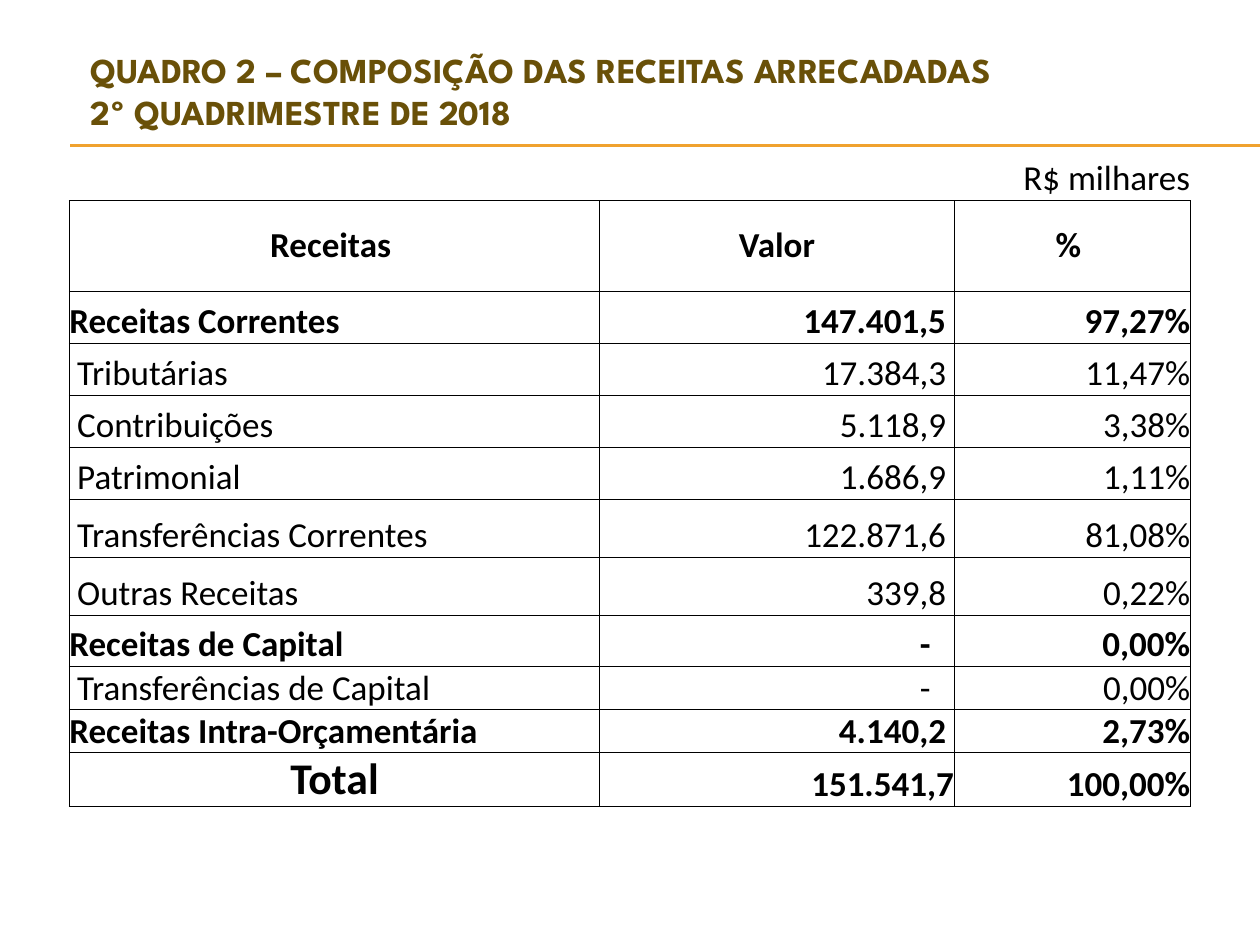
import dataclasses
import pptx
import pptx.util
import pptx.dml.color
import pptx.enum.text
import pptx.oxml
import pptx.oxml.ns
import lxml.etree

Pt = pptx.util.Pt
Align = pptx.enum.text.PP_ALIGN
Anchor = pptx.enum.text.MSO_ANCHOR


@dataclasses.dataclass(frozen=True)
class Theme:
    title: str = "695008"
    rule: str = "F0A22E"
    ink: str = "000000"
    head: str = "League Spartan"
    body: str = "Calibri"
    size: int = 20
    large: int = 25
    thin: float = 0.5
    pad: float = 4.5


theme = Theme()
LEFT, RIGHT, MID = Align.LEFT, Align.RIGHT, Align.CENTER
COLS = [303.2, 69, 133.4, 135]
ROWS = [24.5, 52] + [29.7] * 4 + [33.2] * 2 + [29, 25, 24.5, 30.4]
DATA = [
    ("Receitas Correntes", "147.401,5", "97,27%", True),
    ("Tributárias", "17.384,3", "11,47%", False),
    ("Contribuições", "5.118,9", "3,38%", False),
    ("Patrimonial", "1.686,9", "1,11%", False),
    ("Transferências Correntes", "122.871,6", "81,08%", False),
    ("Outras Receitas", "339,8", "0,22%", False),
    ("Receitas de Capital", "-", "0,00%", True),
    ("Transferências de Capital", "-", "0,00%", False),
    ("Receitas Intra-Orçamentária", "4.140,2", "2,73%", True),
]


def color(code):
    return pptx.dml.color.RGBColor.from_string(code)


def write(frame, text, font=theme.body, size=theme.size, ink=theme.ink,
          bold=False, align=LEFT):
    frame.text = text
    for para in frame.paragraphs:
        para.alignment = align
        for run in para.runs:
            run.font.name = font
            run.font.size = Pt(size)
            run.font.bold = bold
            run.font.color.rgb = color(ink)


def add_title(slide, text):
    title = slide.shapes.title
    title.left, title.top = Pt(44.6), Pt(33.8)
    title.width, title.height = Pt(646.6), Pt(36)
    frame = title.text_frame
    write(frame, text, font=theme.head, ink=theme.title, bold=True)
    frame.word_wrap = True
    frame.auto_size = pptx.enum.text.MSO_AUTO_SIZE.NONE
    frame.vertical_anchor = Anchor.MIDDLE


def add_rule(slide, y):
    kind = pptx.enum.shapes.MSO_CONNECTOR.STRAIGHT
    rule = slide.shapes.add_connector(kind, Pt(40.3), Pt(y), Pt(720), Pt(y))
    rule.line.color.rgb = color(theme.rule)
    rule.line.width = Pt(0.75)
    props = rule._element.spPr
    lxml.etree.SubElement(props, pptx.oxml.ns.qn("a:effectLst"))


def set_edges(cell, sides):
    props = cell._tc.get_or_add_tcPr()
    space = pptx.oxml.ns.nsdecls("a")
    for spot, side in enumerate("LRTB"):
        fill = "<a:noFill/>"
        if side in sides:
            fill = f'<a:solidFill><a:srgbClr val="{theme.ink}"/></a:solidFill>'
        edge = f'<a:ln{side} {space} w="{Pt(theme.thin)}">{fill}</a:ln{side}>'
        props.insert(spot, pptx.oxml.parse_xml(edge))


def fill_cell(cell, text, left=0, right=0, anchor=Anchor.BOTTOM, **style):
    write(cell.text_frame, text, **style)
    cell.margin_left, cell.margin_right = Pt(left), Pt(right)
    cell.vertical_anchor = anchor


def add_grid(slide):
    shape = slide.shapes.add_table(len(ROWS), len(COLS), Pt(39.6), Pt(90),
                                   Pt(sum(COLS)), Pt(sum(ROWS)))
    grid = shape.table
    grid.first_row = grid.horz_banding = False
    for col, width in zip(grid.columns, COLS):
        col.width = Pt(width)
    for num, (row, height) in enumerate(zip(grid.rows, ROWS)):
        row.height = Pt(height)
        for cell in row.cells:
            cell.margin_left = cell.margin_right = 0
            cell.margin_top = cell.margin_bottom = 0
            cell.fill.background()
            set_edges(cell, "LRTB" if num else "B")
        if num:
            grid.cell(num, 1).merge(grid.cell(num, 2))
    return grid


def fill_grid(grid):
    pad = theme.pad
    fill_cell(grid.cell(0, 3), "R$ milhares", align=RIGHT)
    for col, text, gap in ((0, "Receitas", pad), (1, "Valor", 0), (3, "%", pad)):
        fill_cell(grid.cell(1, col), text, right=gap, anchor=Anchor.MIDDLE,
                  bold=True, align=MID)
    for num, (name, value, share, bold) in enumerate(DATA, 2):
        fill_cell(grid.cell(num, 0), name, left=0 if bold else pad, bold=bold)
        fill_cell(grid.cell(num, 1), value, bold=bold, align=RIGHT,
                  right=3 * pad if value == "-" else pad)
        fill_cell(grid.cell(num, 3), share, bold=bold, align=RIGHT)
    last = len(ROWS) - 1
    fill_cell(grid.cell(last, 0), "Total", size=theme.large, bold=True, align=MID)
    for col, text in ((1, "151.541,7"), (3, "100,00%")):
        fill_cell(grid.cell(last, col), text, bold=True, align=RIGHT)


def main():
    deck = pptx.Presentation()
    deck.slide_width, deck.slide_height = Pt(720), Pt(540)
    slide = deck.slides.add_slide(deck.slide_layouts[5])
    for y in (82.8, 83.5):
        add_rule(slide, y)
    add_title(slide, "QUADRO 2 – COMPOSIÇÃO DAS RECEITAS ARRECADADAS\v"
                     "2º QUADRIMESTRE DE 2018")
    fill_grid(add_grid(slide))
    deck.save("out.pptx")


if __name__ == "__main__":
    main()
